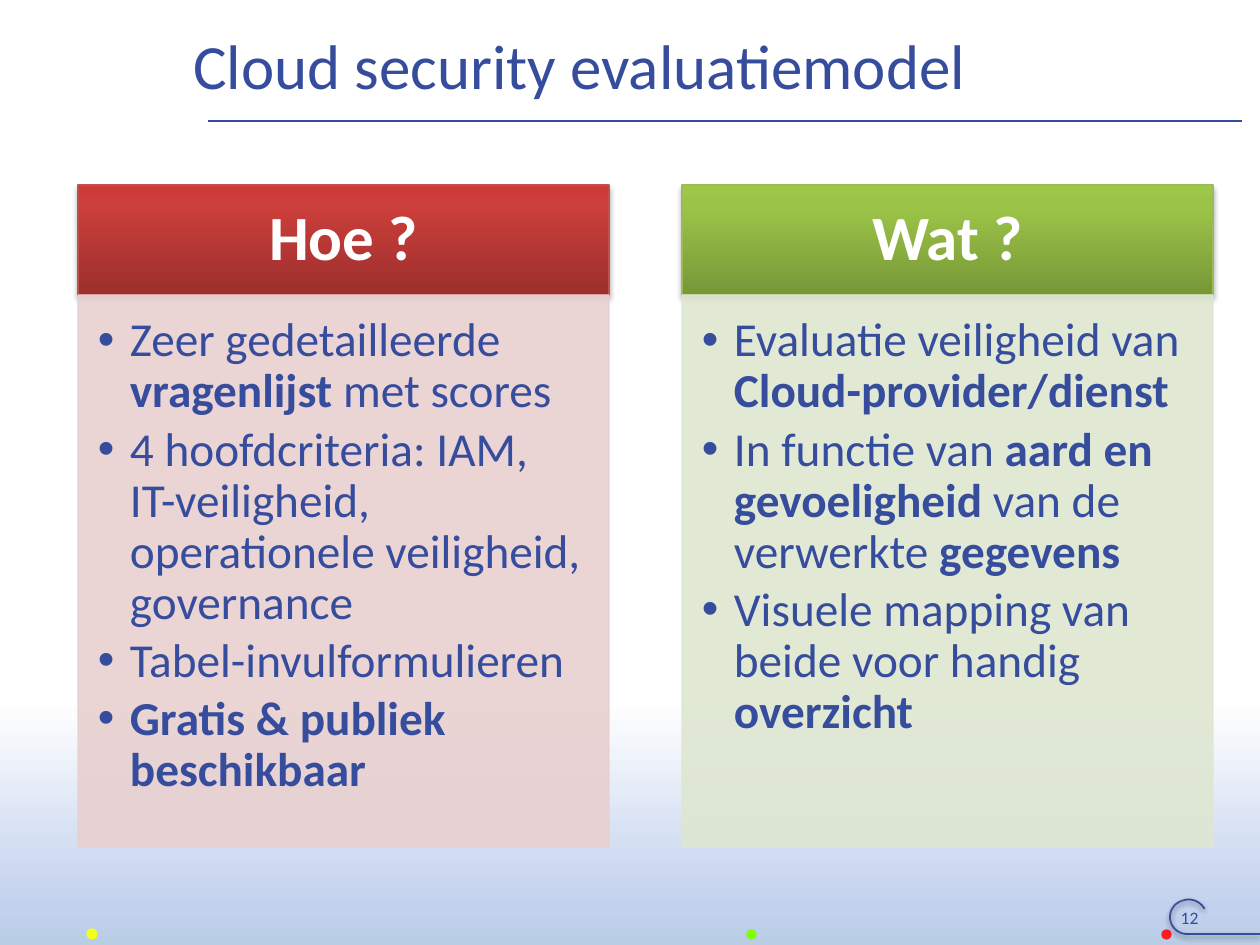
"""Build the cloud security evaluation model slide."""
from itertools import pairwise
from math import cos, radians, sin

from lxml import etree
from pptx import Presentation
from pptx.dml.color import RGBColor
from pptx.enum.shapes import MSO_CONNECTOR, MSO_SHAPE
from pptx.enum.text import MSO_ANCHOR, PP_ALIGN
from pptx.oxml.ns import qn
from pptx.util import Emu, Pt

RECTANGLE, OVAL = MSO_SHAPE.RECTANGLE, MSO_SHAPE.OVAL
STRAIGHT = MSO_CONNECTOR.STRAIGHT
TOP, MIDDLE = MSO_ANCHOR.TOP, MSO_ANCHOR.MIDDLE
LEFT, CENTER = PP_ALIGN.LEFT, PP_ALIGN.CENTER

BLUE = RGBColor(0x36, 0x4C, 0x9D)
WHITE = RGBColor(0xFF, 0xFF, 0xFF)
RED_LINE = RGBColor(0xC0, 0x50, 0x4D)
RED_TINT = RGBColor(0xE8, 0xD0, 0xD0)
GREEN_LINE = RGBColor(0x9B, 0xBB, 0x59)
GREEN_TINT = RGBColor(0xDE, 0xE7, 0xD1)
RED_DOT = RGBColor(0xFF, 0x1A, 0x26)
GREEN_DOT = RGBColor(0x80, 0xFF, 0x00)
YELLOW_DOT = RGBColor(0xF2, 0xFF, 0x1A)
SKY = [(0, RGBColor(0xB9, 0xCD, 0xE5)), (15, RGBColor(0xC2, 0xD1, 0xED)), (100, WHITE)]
RED_STOPS = [(0, RGBColor(0x9C, 0x2F, 0x2D)), (80, RGBColor(0xCB, 0x3E, 0x3A)),
             (100, RGBColor(0xCE, 0x3B, 0x37))]
GREEN_STOPS = [(0, RGBColor(0x77, 0x97, 0x37)), (80, RGBColor(0x9B, 0xC3, 0x48)),
               (100, RGBColor(0x9D, 0xC7, 0x46))]

FONT = "Calibri"
TITLE = "Cloud security evaluatiemodel"
PAGE_NUMBER = "12"
COLUMNS = [
    {"heading": "Hoe ?", "stops": RED_STOPS, "line": RED_LINE, "tint": RED_TINT,
     "items": [
         [("Zeer gedetailleerde ", False), ("vragenlijst", True), (" met scores", False)],
         [("4 hoofdcriteria: IAM, IT-veiligheid, operationele veiligheid, governance", False)],
         [("Tabel-invulformulieren", False)],
         [("Gratis & publiek beschikbaar", True)],
     ]},
    {"heading": "Wat ?", "stops": GREEN_STOPS, "line": GREEN_LINE, "tint": GREEN_TINT,
     "items": [
         [("Evaluatie veiligheid van ", False), ("Cloud-provider/dienst", True)],
         [("In functie van ", False), ("aard en gevoeligheid", True),
          (" van de verwerkte ", False), ("gegevens", True)],
         [("Visuele mapping van beide voor handig ", False), ("overzicht", True)],
     ]},
]
DOTS = [(1162, 930, 9, RED_DOT), (747, 930, 9, GREEN_DOT), (87, 929, 10, YELLOW_DOT)]

WIDTH, HEIGHT = 1260, 945
SKY_TOP = 700
COLUMN_LEFT, COLUMN_WIDTH, COLUMN_STEP = 78, 531, 604
HEADING_TOP, HEADING_HEIGHT, PANEL_HEIGHT = 185, 110, 552
CURL_X, CURL_Y, CURL_RADIUS, CURL_STEPS = 1187, 917, 17, 38
CURL_START, CURL_SWEEP = -25, -245


def px(value):
    return Emu(round(value * 914400 / 126))


def add_shape(slide, kind, box, fill=None, line=None, width=0.75):
    shape = slide.shapes.add_shape(kind, *map(px, box))
    shape.shadow.inherit = False
    if fill is not None:
        shape.fill.solid()
        shape.fill.fore_color.rgb = fill
    if line is None:
        shape.line.fill.background()
    else:
        shape.line.color.rgb = line
        shape.line.width = Pt(width)
    return shape


def add_line(slide, start, end, width):
    line = slide.shapes.add_connector(STRAIGHT, *map(px, (*start, *end)))
    line.line.color.rgb = BLUE
    line.line.width = Pt(width)
    etree.SubElement(line._element.spPr, qn("a:effectLst"))
    return line


def set_gradient(shape, stops):
    shape.fill.gradient()
    shape.fill.gradient_angle = 90
    stop_list = shape._element.spPr.find(qn("a:gradFill")).find(qn("a:gsLst"))
    for old_stop in list(stop_list):
        stop_list.remove(old_stop)
    for position, color in stops:
        stop = etree.SubElement(stop_list, qn("a:gs"), pos=str(position * 1000))
        etree.SubElement(stop, qn("a:srgbClr"), val=str(color))


def set_shadow(shape, distance, opacity):
    effects = shape._element.spPr.find(qn("a:effectLst"))
    shadow = etree.SubElement(effects, qn("a:outerShdw"), blurRad=str(Pt(3.1)),
                              dist=str(Pt(distance)), dir="5400000", rotWithShape="0")
    color = etree.SubElement(shadow, qn("a:srgbClr"), val="000000")
    etree.SubElement(color, qn("a:alpha"), val=str(opacity * 1000))


def set_opacity(shape, opacity):
    for color in shape._element.spPr.iter(qn("a:srgbClr")):
        etree.SubElement(color, qn("a:alpha"), val=str(opacity * 1000))


def set_frame(shape, insets, anchor):
    frame = shape.text_frame
    frame.word_wrap = True
    frame.vertical_anchor = anchor
    frame.margin_left, frame.margin_top, frame.margin_right, frame.margin_bottom = map(px, insets)
    return frame


def fill_paragraph(paragraph, runs, size, color, alignment, spacing=None):
    paragraph.alignment = alignment
    paragraph.line_spacing = spacing
    for text, bold in runs:
        run = paragraph.add_run()
        run.text = text
        run.font.name = FONT
        run.font.size = Pt(size)
        run.font.bold = bold
        run.font.color.rgb = color


def add_label(slide, box, text, size, insets, anchor, alignment):
    frame = set_frame(slide.shapes.add_textbox(*map(px, box)), insets, anchor)
    fill_paragraph(frame.paragraphs[0], [(text, False)], size, BLUE, alignment)


def add_bullets(frame, items):
    for index, runs in enumerate(items):
        paragraph = frame.add_paragraph() if index else frame.paragraphs[0]
        properties = paragraph._p.get_or_add_pPr()
        properties.set("marL", str(px(32)))
        properties.set("indent", str(-px(32)))
        etree.SubElement(properties, qn("a:buFont"), typeface="Arial")
        etree.SubElement(properties, qn("a:buChar"), char="•")
        paragraph.space_after = Pt(4)
        fill_paragraph(paragraph, runs, 27, BLUE, LEFT, 0.9)


def add_column(slide, left, column):
    heading = add_shape(slide, RECTANGLE, (left, HEADING_TOP, COLUMN_WIDTH, HEADING_HEIGHT),
                        line=column["line"])
    set_gradient(heading, column["stops"])
    set_shadow(heading, 1.8, 35)
    frame = set_frame(heading, (35, 20, 35, 20), MIDDLE)
    fill_paragraph(frame.paragraphs[0], [(column["heading"], True)], 36, WHITE, CENTER, 0.9)

    panel_box = (left, HEADING_TOP + HEADING_HEIGHT, COLUMN_WIDTH, PANEL_HEIGHT)
    panel = add_shape(slide, RECTANGLE, panel_box, column["tint"], column["tint"])
    set_opacity(panel, 90)
    add_bullets(set_frame(panel, (20, 21, 26, 30), TOP), column["items"])


def add_curl(slide):
    points = []
    for step in range(CURL_STEPS + 1):
        angle = radians(CURL_START + CURL_SWEEP * step / CURL_STEPS)
        radius = max(CURL_RADIUS, CURL_RADIUS + 2.4 - 0.2 * step)
        points.append((CURL_X + radius * cos(angle), CURL_Y + radius * sin(angle)))
    points.append((WIDTH, CURL_Y + CURL_RADIUS))
    for start, end in pairwise(points):
        set_shadow(add_line(slide, start, end, 1), 1.6, 38)


def main():
    presentation = Presentation()
    presentation.slide_width, presentation.slide_height = px(WIDTH), px(HEIGHT)
    slide = presentation.slides.add_slide(presentation.slide_layouts[6])

    sky = add_shape(slide, RECTANGLE, (0, SKY_TOP, WIDTH, HEIGHT - SKY_TOP))
    set_gradient(sky, SKY)
    add_line(slide, (208, 121), (1242, 121), 1.5)
    for left, top, size, color in DOTS:
        add_shape(slide, OVAL, (left, top, size, size), color, color, 0)
    add_curl(slide)

    add_label(slide, (193, 19, 1067, 91), TITLE, 36, (0, 6, 13, 6), MIDDLE, LEFT)
    for index, column in enumerate(COLUMNS):
        add_column(slide, COLUMN_LEFT + index * COLUMN_STEP, column)
    add_label(slide, (1152, 901, 67, 30), PAGE_NUMBER, 10, (13, 6, 5, 0), TOP, CENTER)
    presentation.save("out.pptx")


if __name__ == "__main__":
    main()
